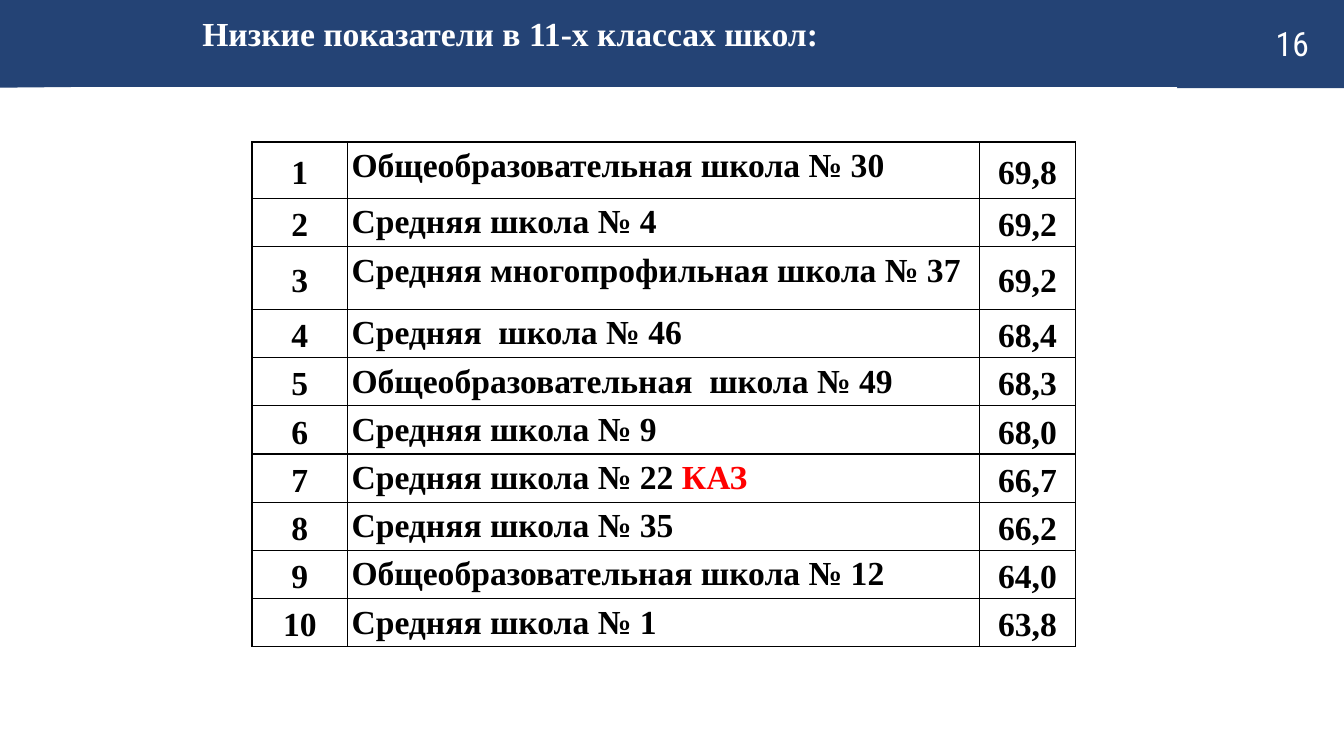
"""Slide with the ranking of schools that have low results in 11th grade."""
from lxml import etree
from pptx import Presentation
from pptx.dml.color import RGBColor
from pptx.enum.text import MSO_ANCHOR, PP_ALIGN
from pptx.oxml.ns import qn
from pptx.util import Cm, Pt

CENTER, LEFT = PP_ALIGN.CENTER, PP_ALIGN.LEFT
MIDDLE, TOP = MSO_ANCHOR.MIDDLE, MSO_ANCHOR.TOP
NAVY, WHITE, BLACK, RED = "244375", "FFFFFF", "000000", "FF0000"
SERIF, CONDENSED = "Times New Roman", "Roboto Condensed"

SCHOOLS = [
    (["Общеобразовательная школа № 30"], "69,8"),
    (["Средняя школа № 4"], "69,2"),
    (["Средняя многопрофильная школа № 37"], "69,2"),
    (["Средняя  школа № 46"], "68,4"),
    (["Общеобразовательная  школа № 49"], "68,3"),
    (["Средняя школа № 9"], "68,0"),
    (["Средняя школа № 22 ", "КАЗ"], "66,7"),
    (["Средняя школа № 35"], "66,2"),
    (["Общеобразовательная школа № 12"], "64,0"),
    (["Средняя школа № 1"], "63,8"),
]
ROW_HEIGHT = 1.215
TALL_ROWS = {0: 1.42, 2: 1.58}
COLUMN_WIDTHS = [2.41, 15.93, 2.41]


def color(value):
    """Turn a hex string into a colour."""
    return RGBColor.from_string(value)


class SlideBuilder:
    """Hold the text style and the current slide."""

    def __init__(self, page, size=24):
        """Remember the page and the common text size."""
        self.page = page
        self.size = Pt(size)

    def style(self, span, font, tint, bold):
        """Format one run."""
        span.font.name = font
        span.font.size = self.size
        span.font.bold = bold
        span.font.color.rgb = color(tint)

    def outline(self, points):
        """Draw a closed navy outline through points in centimetres."""
        corners = [(Cm(x), Cm(y)) for x, y in points]
        builder = self.page.shapes.build_freeform(*corners[0])
        builder.add_line_segments(corners[1:], close=True)
        shape = builder.convert_to_shape()
        shape.shadow.inherit = False
        shape.fill.solid()
        shape.fill.fore_color.rgb = color(NAVY)
        shape.line.fill.background()

    def text(self, words, place, font, bold=False, wrap=True, insets=(0.25, 0.13)):
        """Add a line of white text."""
        box = self.page.shapes.add_textbox(*map(Cm, place))
        frame = box.text_frame
        frame.word_wrap = wrap
        frame.margin_left = frame.margin_right = Cm(insets[0])
        frame.margin_top = frame.margin_bottom = Cm(insets[1])
        frame.text = words
        self.style(frame.paragraphs[0].runs[0], font, WHITE, bold)

    def border(self, cell):
        """Give a cell thin black edges."""
        properties = cell._tc.get_or_add_tcPr()
        for index, edge in enumerate(("a:lnL", "a:lnR", "a:lnT", "a:lnB")):
            line = etree.Element(qn(edge), w=str(Pt(1)))
            fill = etree.SubElement(line, qn("a:solidFill"))
            etree.SubElement(fill, qn("a:srgbClr"), val=BLACK)
            properties.insert(index, line)

    def cell(self, cell, parts, align, anchor):
        """Fill one table cell, with any second part in red."""
        cell.fill.background()
        self.border(cell)
        cell.margin_left = cell.margin_right = Cm(0.1)
        cell.margin_top = cell.margin_bottom = 0
        cell.vertical_anchor = anchor
        paragraph = cell.text_frame.paragraphs[0]
        paragraph.alignment = align
        paragraph.line_spacing = 1.15
        for part, tint in zip(parts, (BLACK, RED)):
            span = paragraph.add_run()
            span.text = part
            self.style(span, SERIF, tint, True)

    def ranking(self, left, top, schools):
        """Add the numbered table of schools and scores."""
        heights = [TALL_ROWS.get(i, ROW_HEIGHT) for i in range(len(schools))]
        table = self.page.shapes.add_table(
            len(schools), len(COLUMN_WIDTHS), Cm(left), Cm(top),
            Cm(sum(COLUMN_WIDTHS)), Cm(sum(heights))).table
        table.first_row = table.horz_banding = False
        for column, width in zip(table.columns, COLUMN_WIDTHS):
            column.width = Cm(width)
        for index, (name, score) in enumerate(schools):
            table.rows[index].height = Cm(heights[index])
            number, school, result = table.rows[index].cells
            self.cell(number, [str(index + 1)], CENTER, MIDDLE)
            self.cell(school, name, LEFT, TOP)
            self.cell(result, [score], CENTER, MIDDLE)


def main():
    """Build and save the deck."""
    deck = Presentation()
    deck.slide_width, deck.slide_height = Cm(33.87), Cm(19.05)
    slide = SlideBuilder(deck.slides.add_slide(deck.slide_layouts[6]))
    slide.outline([(0, 0), (33.87, 0), (33.87, 2.2), (0, 2.2)])
    slide.outline([(4.22, 0), (0, 0), (0, 2.21), (3.2, 2.18)])
    slide.outline([(33.87, 0.03), (30.68, 0.03), (29.66, 2.22), (33.87, 2.22)])
    slide.text("16", (32.15, 0.56, 1.32, 1.07), CONDENSED, insets=(0, 0.03))
    slide.text("Низкие показатели в 11-х классах школ:",
               (4.85, 0.2, 16.41, 1.27), SERIF, bold=True, wrap=False)
    slide.ranking(6.35, 3.58, SCHOOLS)
    deck.save("out.pptx")


if __name__ == "__main__":
    main()
